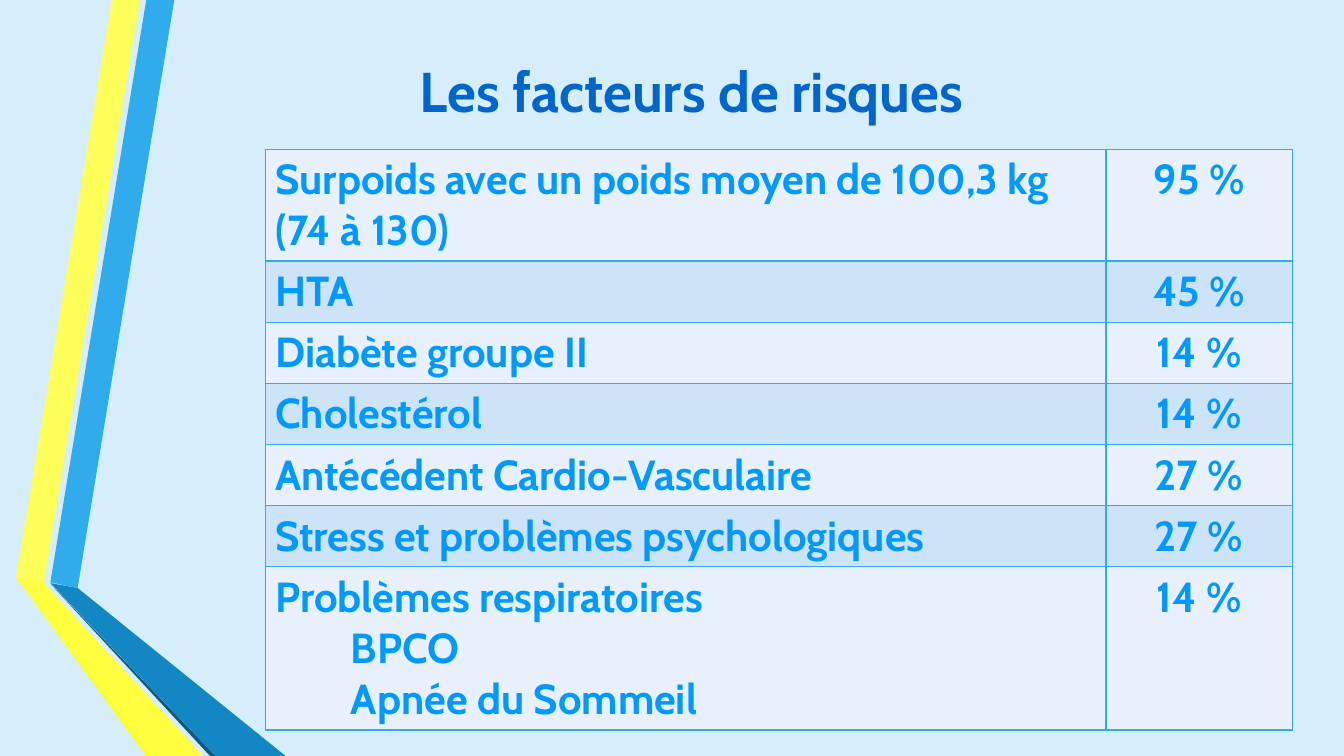
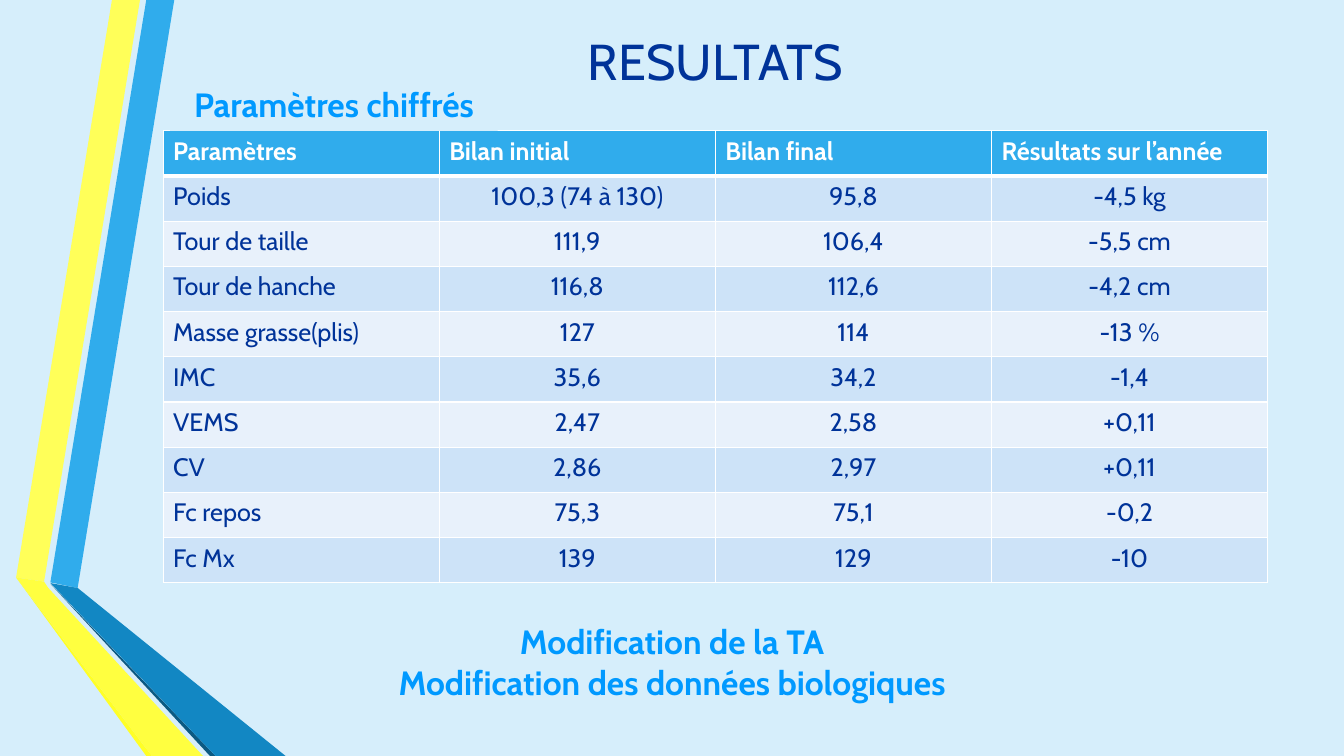
from dataclasses import dataclass

from lxml.etree import SubElement
from pptx import Presentation
from pptx.dml.color import RGBColor
from pptx.enum.shapes import MSO_SHAPE
from pptx.enum.text import MSO_ANCHOR, PP_ALIGN
from pptx.oxml.ns import qn
from pptx.util import Pt


@dataclass(frozen=True)
class Theme:
    # Colours
    background: str = "D6EEFB"
    navy: str = "003399"
    royal: str = "0066CC"
    azure: str = "0099FF"
    sky: str = "30ACEC"
    white: str = "FFFFFF"
    bands: tuple = ("E8F1FB", "CDE3F8")
    # Type
    font: str = "Cabin"
    large_title: int = 40
    title: int = 36
    large_cell: int = 30
    callout: int = 24
    cell: int = 18
    # Table details
    indent: int = 54
    border: int = 1
    header_border: int = 3


THEME = Theme()

# Folded ribbon down the left edge: colour and corners, back to front
RIBBON = [
    (THEME.sky, [(36, 416), (55.5, 420), (124.5, 0), (104.5, 0)]),
    ("FFFF59", [(100, 0), (80, 0), (11.5, 412.5), (31.5, 415.5)]),
    ("FFFF26", [(11.5, 412.5), (104.5, 540), (108.5, 540)]),
    ("0C5A82", [(36, 417), (150, 540), (154, 540)]),
    ("1287C3", [(36, 416.5), (154, 540), (204, 540), (55.5, 420)]),
    ("FFFF40", [(145, 540), (34.5, 420), (31.5, 415.5), (11.5, 412.5),
                (108.5, 540)]),
]

RISK_FACTORS = [
    ("Surpoids avec un poids moyen de 100,3 kg (74 à 130)", "95 %"),
    ("HTA", "45 %"),
    ("Diabète groupe II", "14 %"),
    ("Cholestérol", "14 %"),
    ("Antécédent Cardio-Vasculaire", "27 %"),
    ("Stress et problèmes psychologiques", "27 %"),
    ("Problèmes respiratoires\nBPCO\nApnée du Sommeil", "14 %"),
]

RESULTS = [
    ("Paramètres", "Bilan initial", "Bilan final", "Résultats sur l’année"),
    ("Poids", "100,3 (74 à 130)", "95,8", "-4,5 kg"),
    ("Tour de taille", "111,9", "106,4", "-5,5 cm"),
    ("Tour de hanche", "116,8", "112,6", "-4,2 cm"),
    ("Masse grasse(plis)", "127", "114", "-13 %"),
    ("IMC", "35,6", "34,2", "-1,4"),
    ("VEMS", "2,47", "2,58", "+0,11"),
    ("CV", "2,86", "2,97", "+0,11"),
    ("Fc repos", "75,3", "75,1", "-0,2"),
    ("Fc Mx", "139", "129", "-10"),
]


class Deck:
    """Holds the theme and the current slide; all lengths are in points."""

    def __init__(self, theme):
        self.theme = theme
        self.prs = Presentation()
        self.prs.slide_width, self.prs.slide_height = Pt(960), Pt(540)
        self.paint(self.prs.slide_master.background.fill, theme.background)
        self.s = None

    @staticmethod
    def paint(fill, color):
        fill.solid()
        fill.fore_color.rgb = RGBColor.from_string(color)

    def new_slide(self):
        self.s = self.prs.slides.add_slide(self.prs.slide_layouts[6])
        for color, points in RIBBON:
            self.outline(points, color)

    def finish(self, sp, color):
        self.paint(sp.fill, color)
        sp.line.fill.background()
        sp.shadow.inherit = False

    def outline(self, points, color):
        start, *rest = [(Pt(x), Pt(y)) for x, y in points]
        builder = self.s.shapes.build_freeform(*start)
        builder.add_line_segments(rest, close=True)
        self.finish(builder.convert_to_shape(), color)

    def set_text(self, tf, text, size, color, bold=False, align=PP_ALIGN.CENTER):
        tf.text = text
        tf.word_wrap = True
        for p in tf.paragraphs:
            p.alignment = align
            for r in p.runs:
                r.font.name = self.theme.font
                r.font.size = Pt(size)
                r.font.bold = bold
                r.font.color.rgb = RGBColor.from_string(color)

    def title(self, box, text, size, color, bold=False):
        sp = self.s.shapes.add_textbox(*map(Pt, box))
        self.set_text(sp.text_frame, text, size, color, bold)
        sp.text_frame.vertical_anchor = MSO_ANCHOR.MIDDLE

    def callout(self, box, text):
        sp = self.s.shapes.add_shape(MSO_SHAPE.RECTANGLE, *map(Pt, box))
        self.finish(sp, self.theme.background)
        self.set_text(sp.text_frame, text, self.theme.callout, self.theme.azure, True)
        sp.text_frame.vertical_anchor = MSO_ANCHOR.MIDDLE

    def border(self, cell, color, top, bottom):
        tc_pr = cell._tc.get_or_add_tcPr()
        thin = self.theme.border
        for side, width in zip("LRTB", (thin, thin, top, bottom)):
            ln = SubElement(tc_pr, qn(f"a:ln{side}"), w=str(Pt(width)))
            fill = SubElement(ln, qn("a:solidFill"))
            SubElement(fill, qn("a:srgbClr"), val=color)

    def table(self, left, top, widths, heights, data, size, color, line,
              bold=False, header=False):
        t = self.theme
        frame = self.s.shapes.add_table(len(data), len(widths), Pt(left), Pt(top),
                                        Pt(sum(widths)), Pt(sum(heights)))
        table = frame.table
        table.first_row = header
        for column, width in zip(table.columns, widths):
            column.width = Pt(width)
        for i, (height, values) in enumerate(zip(heights, data)):
            table.rows[i].height = Pt(height)
            is_header = header and i == 0
            top_line = t.header_border if header and i == 1 else t.border
            bottom_line = t.header_border if is_header else t.border
            for j, value in enumerate(values):
                cell = table.cell(i, j)
                left_aligned = is_header or j == 0
                self.border(cell, line, top_line, bottom_line)
                self.paint(cell.fill, t.sky if is_header else t.bands[i % 2])
                self.set_text(cell.text_frame, value, size,
                              t.white if is_header else color, bold or is_header,
                              PP_ALIGN.LEFT if left_aligned else PP_ALIGN.CENTER)
                # Further paragraphs of a cell are sub-items
                for p in cell.text_frame.paragraphs[1:]:
                    p._p.get_or_add_pPr().set("marL", str(Pt(t.indent)))


def main():
    deck = Deck(THEME)

    # Risk factors
    deck.new_slide()
    deck.title((99.5, 21, 789, 87), "Les facteurs de risques",
               THEME.large_title, THEME.royal, bold=True)
    deck.table(189.5, 106.5, [600.5, 133], [80] + [43.7] * 5 + [116.5],
               RISK_FACTORS, THEME.large_cell, THEME.azure, THEME.sky, bold=True)

    # Results
    deck.new_slide()
    deck.title((116.5, 19.5, 789, 47.5), "RESULTATS", THEME.title, THEME.navy)
    deck.table(116.5, 93.5, [197.25] * 4, [32.3] * len(RESULTS),
               RESULTS, THEME.cell, THEME.navy, THEME.white, header=True)
    deck.callout((121.5, 55.5, 234, 38), "Paramètres chiffrés")
    deck.callout((250.5, 443, 459, 59),
                 "Modification de la TA\nModification des données biologiques")

    deck.prs.save("out.pptx")


if __name__ == "__main__":
    main()
